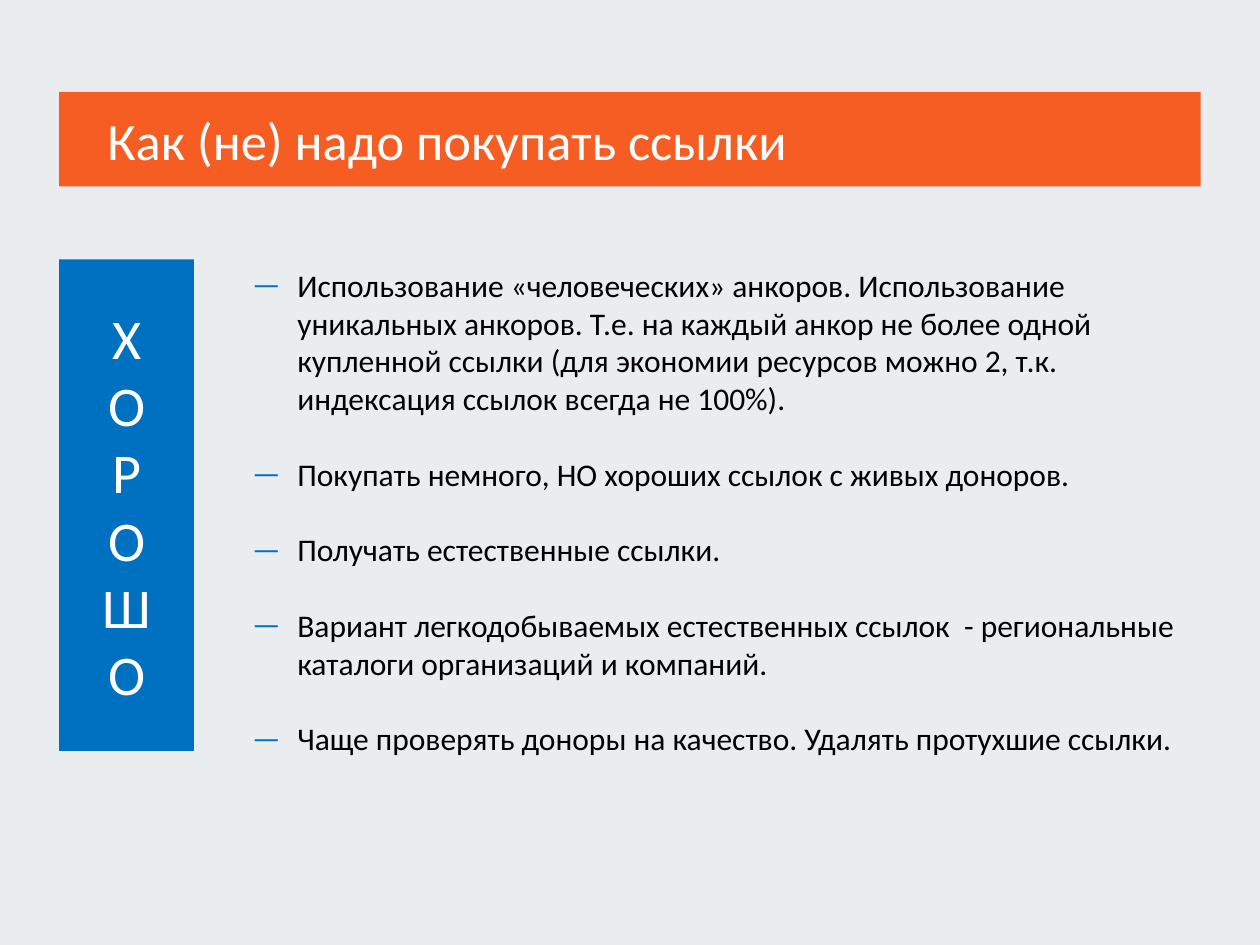
import dataclasses

import lxml.etree
import pptx
import pptx.dml.color
import pptx.enum.shapes
import pptx.enum.text
import pptx.oxml.ns
import pptx.util

COLORS = {
    "page": "E9EDF0",
    "title": "F55D22",
    "accent": "0070C0",
    "light": "FFFFFF",
    "dark": "000000",
}
FONT = "Calibri"
TITLE = "Как (не) надо покупать ссылки"
VERDICT = "ХОРОШО"
ADVICE = [
    "Использование «человеческих» анкоров. Использование уникальных анкоров. "
    "Т.е. на каждый анкор не более одной купленной ссылки (для экономии ресурсов "
    "можно 2, т.к. индексация ссылок всегда не 100%).",
    "Покупать немного, НО хороших ссылок с живых доноров.",
    "Получать естественные ссылки.",
    "Вариант легкодобываемых естественных ссылок  - региональные каталоги "
    "организаций и компаний.",
    "Чаще проверять доноры на качество. Удалять протухшие ссылки.",
]


@dataclasses.dataclass(frozen=True)
class Frame:
    left: float
    top: float
    width: float
    height: float


@dataclasses.dataclass(frozen=True)
class TextStyle:
    size: float
    color: str
    align: pptx.enum.text.PP_ALIGN
    anchor: pptx.enum.text.MSO_ANCHOR
    inset: float = 7.2
    gap: float = 0


TITLE_FRAME = Frame(33.84, 52.56, 652.32, 54)
VERDICT_FRAME = Frame(33.84, 148.32, 77.04, 280.8)
ADVICE_FRAME = Frame(136.8, 148.32, 561.6, 312.48)
BULLET_INDENT = 25.92

LEFT, CENTER = pptx.enum.text.PP_ALIGN.LEFT, pptx.enum.text.PP_ALIGN.CENTER
TOP, MIDDLE = pptx.enum.text.MSO_ANCHOR.TOP, pptx.enum.text.MSO_ANCHOR.MIDDLE
TITLE_STYLE = TextStyle(30, "light", LEFT, MIDDLE, inset=27.5)
VERDICT_STYLE = TextStyle(32, "light", CENTER, MIDDLE)
ADVICE_STYLE = TextStyle(18, "dark", LEFT, TOP, gap=21.6)


def rgb(name: str) -> pptx.dml.color.RGBColor:
    return pptx.dml.color.RGBColor.from_string(COLORS[name])


def paint(target, color: str) -> None:
    target.fill.solid()
    target.fill.fore_color.rgb = rgb(color)


def place(box, frame: Frame) -> None:
    for field in dataclasses.fields(frame):
        setattr(box, field.name, pptx.util.Pt(getattr(frame, field.name)))


def write(box, lines: list[str], style: TextStyle) -> None:
    text = box.text_frame
    text.word_wrap = True
    text.auto_size = pptx.enum.text.MSO_AUTO_SIZE.NONE
    text.vertical_anchor = style.anchor
    text.margin_left = pptx.util.Pt(style.inset)
    for index, line in enumerate(lines):
        para = text.add_paragraph() if index else text.paragraphs[0]
        para.alignment = style.align
        para.space_before = pptx.util.Pt(style.gap if index else 0)
        span = para.add_run()
        span.text = line
        span.font.name = FONT
        span.font.size = pptx.util.Pt(style.size)
        span.font.color.rgb = rgb(style.color)


def add_dash(para, color: str) -> None:
    properties = para._p.get_or_add_pPr()
    indent = pptx.util.Pt(BULLET_INDENT)
    properties.set("marL", str(indent))
    properties.set("indent", str(-indent))
    qn = pptx.oxml.ns.qn
    bullet_color = lxml.etree.SubElement(properties, qn("a:buClr"))
    lxml.etree.SubElement(bullet_color, qn("a:srgbClr"), val=COLORS[color])
    lxml.etree.SubElement(properties, qn("a:buFont"), typeface=FONT)
    lxml.etree.SubElement(properties, qn("a:buChar"), char="—")


def main() -> None:
    deck = pptx.Presentation()
    deck.slide_width = pptx.util.Pt(720)
    deck.slide_height = pptx.util.Pt(540)
    page = deck.slides.add_slide(deck.slide_layouts[1])
    paint(page.background, "page")

    title = page.shapes.title
    place(title, TITLE_FRAME)
    paint(title, "title")
    write(title, [TITLE], TITLE_STYLE)

    advice = page.placeholders[1]
    place(advice, ADVICE_FRAME)
    write(advice, ADVICE, ADVICE_STYLE)
    for para in advice.text_frame.paragraphs:
        add_dash(para, "accent")

    verdict = page.shapes.add_shape(
        pptx.enum.shapes.MSO_SHAPE.RECTANGLE, 0, 0, 0, 0
    )
    place(verdict, VERDICT_FRAME)
    paint(verdict, "accent")
    verdict.line.fill.background()
    verdict.shadow.inherit = False
    write(verdict, list(VERDICT), VERDICT_STYLE)

    deck.save("out.pptx")


if __name__ == "__main__":
    main()
